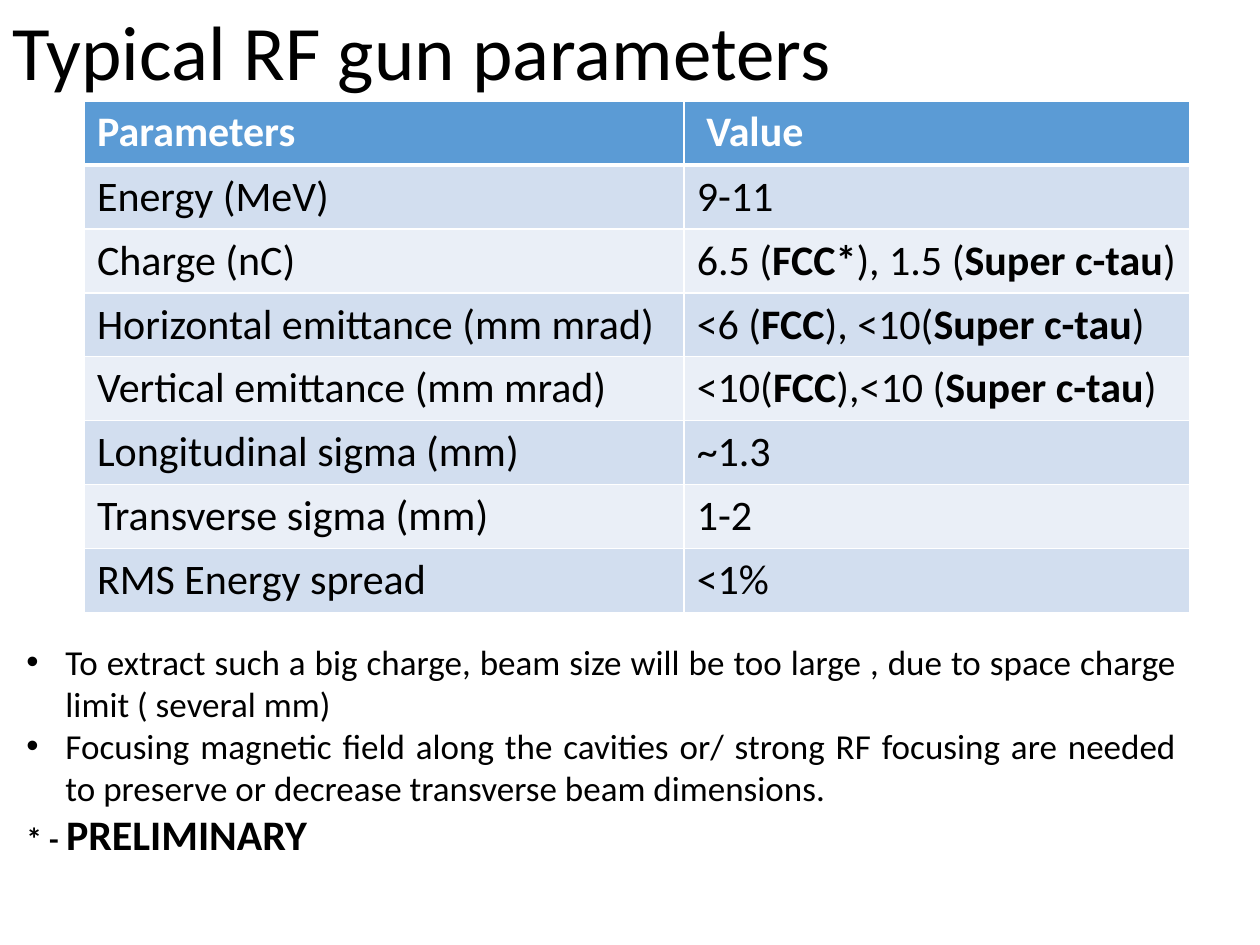
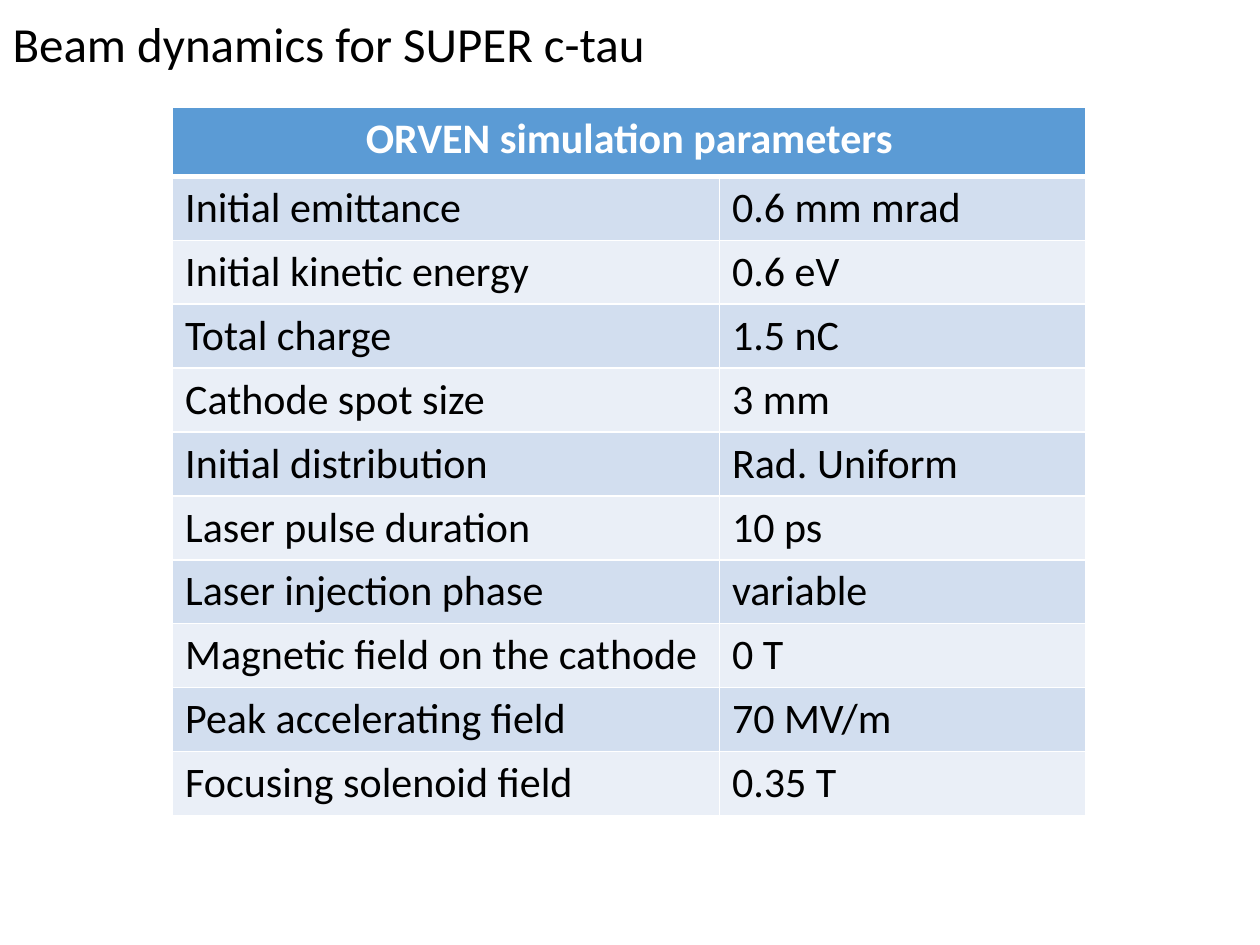
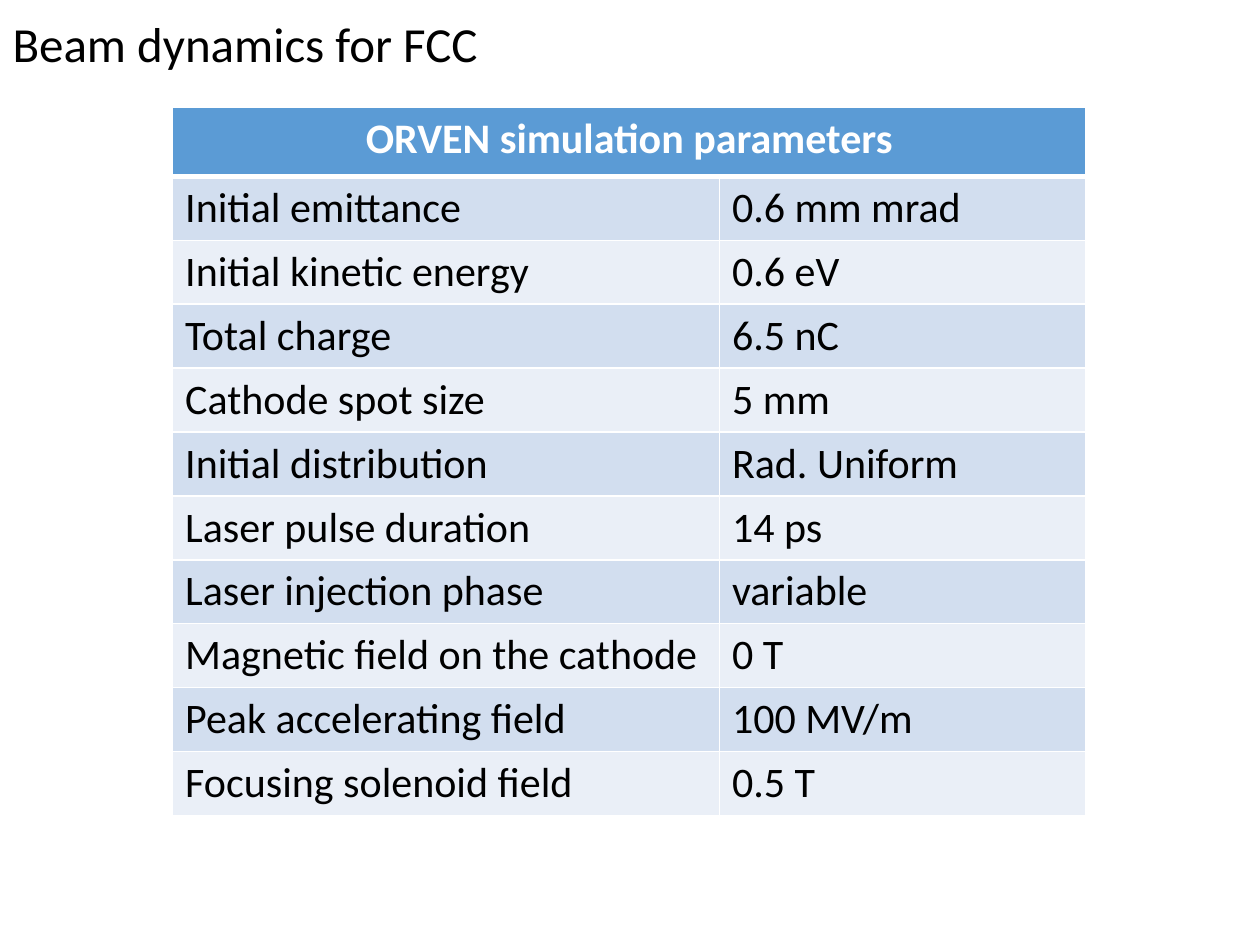
from dataclasses import dataclass
from itertools import cycle

from lxml.etree import SubElement
from pptx import Presentation
from pptx.dml.color import RGBColor
from pptx.enum.text import MSO_ANCHOR, MSO_AUTO_SIZE, PP_ALIGN
from pptx.oxml.ns import qn
from pptx.util import Inches, Pt


@dataclass(frozen=True)
class Theme:
    font: str = "Calibri"
    ink: str = "000000"
    white: str = "FFFFFF"
    head: str = "5B9BD5"
    bands: tuple = ("D2DEEF", "EAEFF7")
    main: int = 44
    sub: int = 28
    cell: int = 24
    note: int = 20
    mark: int = 18
    rule: int = 1
    thick: int = 3


THEME = Theme()

# Text between bars is bold.
GUN = [
    ("Parameters", " Value"),
    ("Energy (MeV)", "9-11"),
    ("Charge (nC)", "6.5 (|FCC*|), 1.5 (|Super c-tau|)"),
    ("Horizontal emittance (mm mrad)", "<6 (|FCC|), <10(|Super c-tau|)"),
    ("Vertical emittance (mm mrad)", "<10(|FCC|),<10 (|Super c-tau|)"),
    ("Longitudinal sigma (mm)", "~1.3"),
    ("Transverse sigma (mm)", "1-2"),
    ("RMS Energy spread", "<1%"),
]
NOTES = [
    "To extract such a big charge, beam size will be too large , due to space "
    "charge limit ( several mm) ",
    "Focusing magnetic field along the cavities or/ strong RF focusing are "
    "needed to preserve or decrease transverse beam dimensions. ",
]
FOOT = [("* - ", THEME.mark), ("PRELIMINARY ", THEME.cell)]

HEAD = "ORVEN simulation parameters"
LABELS = [
    "Initial emittance", "Initial kinetic energy", "Total charge",
    "Cathode spot size", "Initial distribution", "Laser pulse duration",
    "Laser injection phase", "Magnetic field on the cathode",
    "Peak accelerating field", "Focusing solenoid field",
]
BEAMS = {
    "Beam dynamics for SUPER c-tau": [
        "0.6 mm mrad", "0.6 eV", "1.5 nC", "3 mm", "Rad. Uniform",
        "10 ps", "variable", "0 T", "70 MV/m", "0.35 T"],
    "Beam dynamics for FCC": [
        "0.6 mm mrad", "0.6 eV", "6.5 nC", "5 mm", "Rad. Uniform",
        "14 ps", "variable", "0 T", "100 MV/m", "0.5 T"],
}

GUN_GRID = dict(left=0.67, top=0.8, cols=(4.76, 4.01), first=0.51, rest=0.5)
BEAM_GRID = dict(left=1.37, top=0.85, cols=(4.34, 2.91), first=0.55, rest=0.5)


def put(thing, **values):
    for name, value in values.items():
        setattr(thing, name, value)


def place(shape, *box):
    put(shape, **dict(zip(("left", "top", "width", "height"), map(Inches, box))))


def write(para, text, size, color=THEME.ink, bold=False):
    run = para.add_run()
    run.text = text
    put(run.font, name=THEME.font, size=Pt(size), bold=bold)
    run.font.color.rgb = RGBColor.from_string(color)


def title(slide, text, size, height, align):
    shape = slide.shapes.title
    place(shape, 0, 0, 8.62, height)
    put(shape.text_frame, vertical_anchor=MSO_ANCHOR.MIDDLE,
        auto_size=MSO_AUTO_SIZE.NONE)
    para = shape.text_frame.paragraphs[0]
    put(para, alignment=align, line_spacing=0.9)
    write(para, text, size)


def edge(cell, **widths):
    """Draw white borders; they must come before the fill in the cell."""
    props = cell._tc.get_or_add_tcPr()
    for side in "LRTB":
        line = SubElement(props, qn("a:ln" + side),
                          w=str(Pt(widths.get(side, THEME.rule))))
        fill = SubElement(line, qn("a:solidFill"))
        SubElement(fill, qn("a:srgbClr"), val=THEME.white)


def grid(slide, rows, left, top, cols, first, rest):
    tall = [first] + [rest] * (len(rows) - 1)
    table = slide.shapes.add_table(
        len(rows), len(cols),
        *map(Inches, (left, top, sum(cols), sum(tall)))).table
    for col, width in zip(table.columns, cols):
        col.width = Inches(width)
    bands = cycle(THEME.bands)
    for r, texts in enumerate(rows):
        table.rows[r].height = Inches(tall[r])
        top_row = r == 0
        shade = THEME.head if top_row else next(bands)
        color = THEME.white if top_row else THEME.ink
        sides = {0: {"B": THEME.thick}, 1: {"T": THEME.thick}}.get(r, {})
        for c in range(len(cols)):
            cell = table.cell(r, c)
            edge(cell, **sides)
            cell.fill.solid()
            cell.fill.fore_color.rgb = RGBColor.from_string(shade)
            if c < len(texts):
                para = cell.text_frame.paragraphs[0]
                for i, part in enumerate(texts[c].split("|")):
                    write(para, part, THEME.cell, color, top_row or i % 2 == 1)
        if len(texts) == 1:
            table.cell(r, 0).merge(table.cell(r, len(cols) - 1))
            table.cell(r, 0).text_frame.paragraphs[0].alignment = PP_ALIGN.CENTER


def notes(slide):
    body = slide.placeholders[1]
    place(body, 0.11, 5.03, 9.33, 2.15)
    frame = body.text_frame
    put(frame, auto_size=MSO_AUTO_SIZE.NONE, vertical_anchor=MSO_ANCHOR.TOP)
    lines = [[(text, THEME.note)] for text in NOTES] + [FOOT]
    for i, parts in enumerate(lines):
        para = frame.add_paragraph() if i else frame.paragraphs[0]
        put(para, alignment=PP_ALIGN.JUSTIFY, space_before=Pt(0), line_spacing=1.0)
        last = parts is FOOT
        hang = 0 if last else Inches(0.31)
        props = para._p.get_or_add_pPr()
        props.set("marL", str(hang))
        props.set("indent", str(-hang))
        if last:
            SubElement(props, qn("a:buNone"))
        else:
            SubElement(props, qn("a:buFont"), typeface="Arial")
            SubElement(props, qn("a:buChar"), char="•")
        for text, size in parts:
            write(para, text, size, bold=last)


def main():
    deck = Presentation()
    put(deck, slide_width=Inches(10), slide_height=Inches(7.5))
    full, bare = deck.slide_layouts[1], deck.slide_layouts[5]

    slide = deck.slides.add_slide(full)
    title(slide, "Typical RF gun parameters", THEME.main, 0.88, PP_ALIGN.LEFT)
    grid(slide, GUN, **GUN_GRID)
    notes(slide)

    for name, values in BEAMS.items():
        slide = deck.slides.add_slide(bare)
        title(slide, name, THEME.sub, 0.74, PP_ALIGN.JUSTIFY)
        grid(slide, [(HEAD,), *zip(LABELS, values)], **BEAM_GRID)

    deck.save("out.pptx")


if __name__ == "__main__":
    main()
